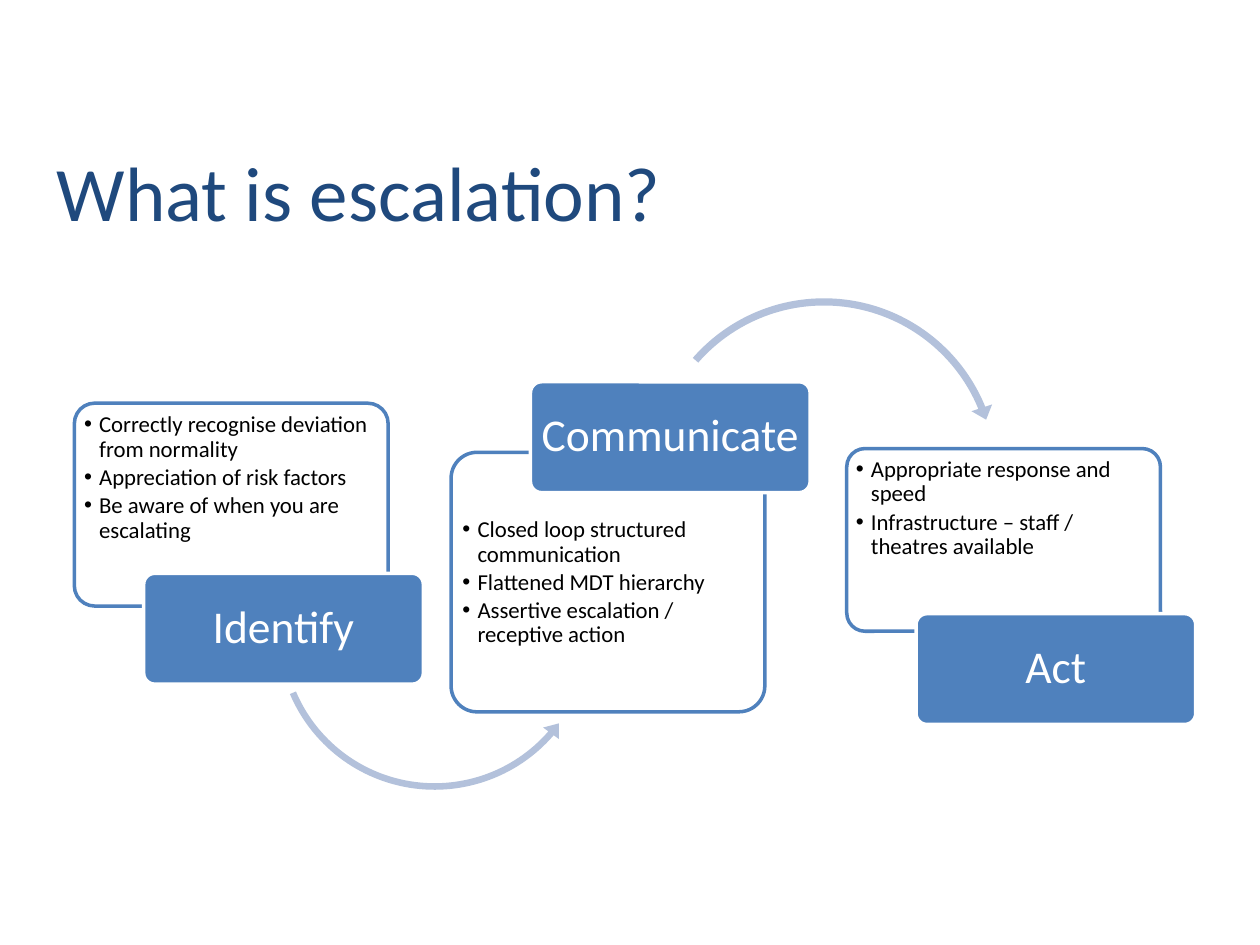
from lxml import etree
from pptx import Presentation
from pptx import util as u
from pptx.dml.color import RGBColor
from pptx.enum import shapes, text
from pptx.oxml.ns import qn

BLUE, NAVY, PALE, WHITE, BLACK = "4F81BD", "1F497D", "B3C1DB", "FFFFFF", "000000"
CARD_WIDTH, LABEL_WIDTH, LABEL_HEIGHT = 2.49, 2.22, 0.88
INDENT = u.Inches(0.12)


def color(value):
    return RGBColor.from_string(value)


class SlideBuilder:
    """Holds the text style and the slide being built."""

    font = "Calibri"

    def __init__(self, slide):
        self.slide = slide

    def add_text(self, paragraph, words, size, ink):
        run = paragraph.add_run()
        run.text = words
        run.font.name = self.font
        run.font.size = u.Pt(size)
        run.font.color.rgb = color(ink)

    def shape(self, kind, left, top, width, height, fill, line=None):
        shape = self.slide.shapes.add_shape(
            kind, *(u.Inches(n) for n in (left, top, width, height)))
        shape.shadow.inherit = False
        shape.fill.solid()
        shape.fill.fore_color.rgb = color(fill)
        if line:
            shape.line.color.rgb = color(line)
            shape.line.width = u.Pt(2)
        else:
            shape.line.fill.background()
        return shape

    def rounded(self, left, top, width, height, fill, line, anchor, margins):
        shape = self.shape(shapes.MSO_SHAPE.ROUNDED_RECTANGLE,
                           left, top, width, height, fill, line)
        shape.adjustments[0] = 0.1
        frame = shape.text_frame
        frame.word_wrap = True
        frame.vertical_anchor = anchor
        (frame.margin_left, frame.margin_top,
         frame.margin_right, frame.margin_bottom) = map(u.Inches, margins)
        return shape

    def title(self, words, left, top, width, height):
        title = self.slide.shapes.title
        title.left, title.top = u.Inches(left), u.Inches(top)
        title.width, title.height = u.Inches(width), u.Inches(height)
        frame = title.text_frame
        frame.vertical_anchor = text.MSO_ANCHOR.MIDDLE
        paragraph = frame.paragraphs[0]
        paragraph.alignment = text.PP_ALIGN.LEFT
        self.add_text(paragraph, words, 44, NAVY)

    def card(self, left, top, height, points, text_top):
        card = self.rounded(left, top, CARD_WIDTH, height, WHITE, BLUE,
                            text.MSO_ANCHOR.TOP, (0.03, text_top, 0.03, 0.03))
        # Slightly transparent fill
        fill = card.element.spPr.find(qn("a:solidFill"))
        etree.SubElement(fill[0], qn("a:alpha"), val="90000")
        frame = card.text_frame
        for index, point in enumerate(points):
            paragraph = frame.add_paragraph() if index else frame.paragraphs[0]
            properties = paragraph._p.get_or_add_pPr()
            properties.set("marL", str(INDENT))
            properties.set("indent", str(-INDENT))
            etree.SubElement(properties, qn("a:buFont"), typeface="Arial")
            etree.SubElement(properties, qn("a:buChar"), char="•")
            paragraph.alignment = text.PP_ALIGN.LEFT
            paragraph.line_spacing = 0.9
            paragraph.space_after = u.Pt(2)
            self.add_text(paragraph, point, 13, BLACK)

    def label(self, left, top, words):
        label = self.rounded(left, top, LABEL_WIDTH, LABEL_HEIGHT, BLUE, WHITE,
                             text.MSO_ANCHOR.MIDDLE, (0.05, 0.04, 0.05, 0.04))
        paragraph = label.text_frame.paragraphs[0]
        paragraph.alignment = text.PP_ALIGN.CENTER
        paragraph.line_spacing = 0.9
        self.add_text(paragraph, words, 26, WHITE)

    def arc(self, kind, left, top, size, rotation, adjustments):
        arc = self.shape(kind, left, top, size, size, PALE)
        arc.rotation = rotation
        for index, value in enumerate(adjustments):
            arc.adjustments[index] = value


def main():
    presentation = Presentation()
    presentation.slide_width = u.Inches(10)
    presentation.slide_height = u.Inches(7.5)
    slide = presentation.slides.add_slide(presentation.slide_layouts[0])
    subtitle = slide.placeholders[1].element
    subtitle.getparent().remove(subtitle)
    builder = SlideBuilder(slide)

    # Heading
    builder.title("What is escalation?", 0.35, 0.95, 8.59, 1.12)

    # Step 1: identify
    builder.card(0.59, 3.2, 1.61, [
        "Correctly recognise deviation from normality",
        "Appreciation of risk factors",
        "Be aware of when you are escalating"], 0.03)
    builder.arc(shapes.MSO_SHAPE.LEFT_CIRCULAR_ARROW, 2.15, 3.72, 2.6, 348.6,
                (0.02, 2.84, 31.37, 101.02, 0.03))
    builder.label(1.14, 4.55, "Identify")

    # Step 2: communicate
    builder.card(3.58, 3.59, 2.06, [
        "Closed loop structured communication",
        "Flattened MDT hierarchy",
        "Assertive escalation / receptive action"], 0.46)
    builder.arc(shapes.MSO_SHAPE.CIRCULAR_ARROW, 5.1, 2.31, 2.88, 16.6,
                (0.02, 2.55, 192.67, 122.72, 0.03))
    builder.label(4.21, 3.03, "Communicate")

    # Step 3: act
    builder.card(6.72, 3.56, 1.45, [
        "Appropriate response and speed",
        "Infrastructure – staff / theatres available"], 0.03)
    builder.label(7.27, 4.87, "Act")

    presentation.save("out.pptx")


if __name__ == "__main__":
    main()
